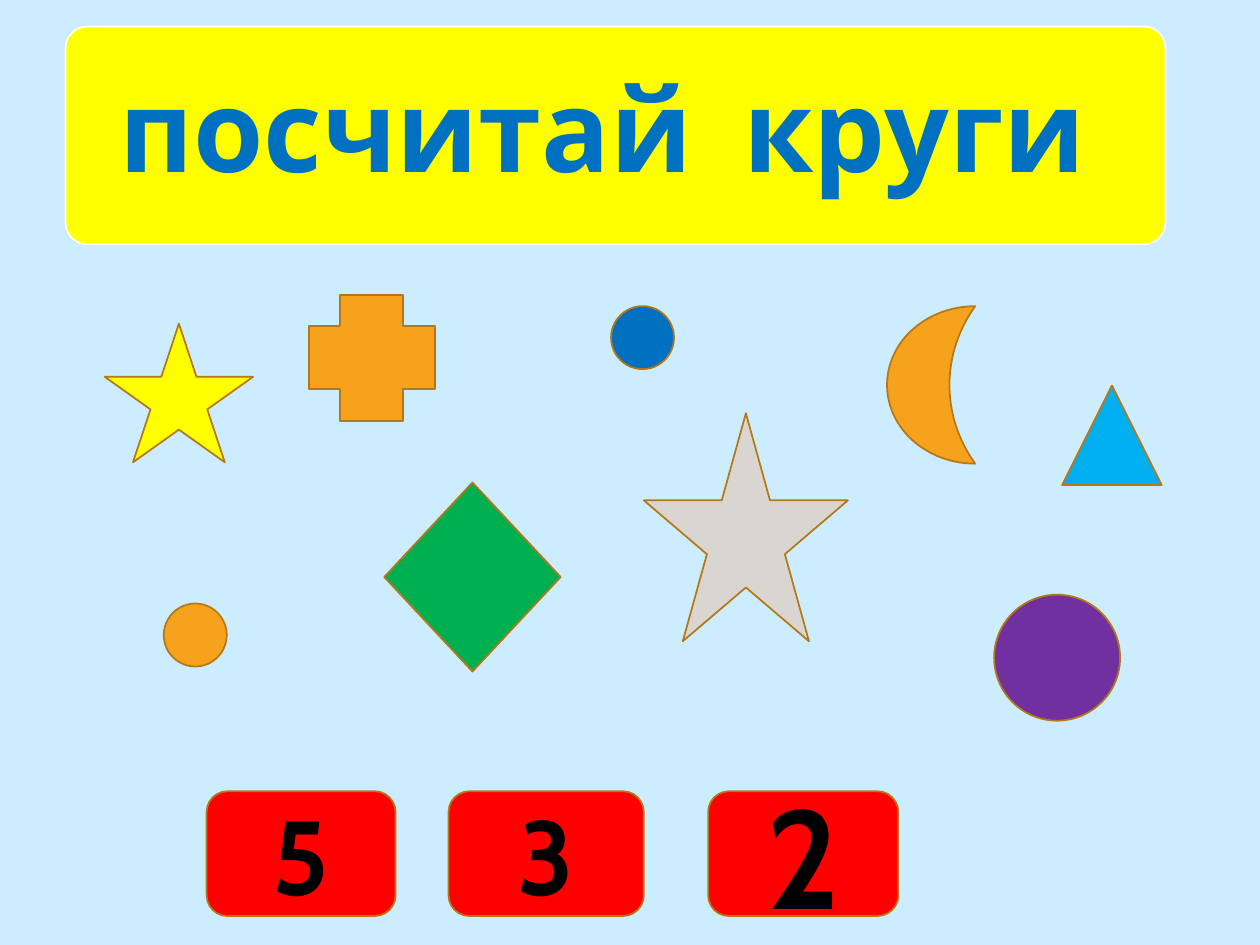
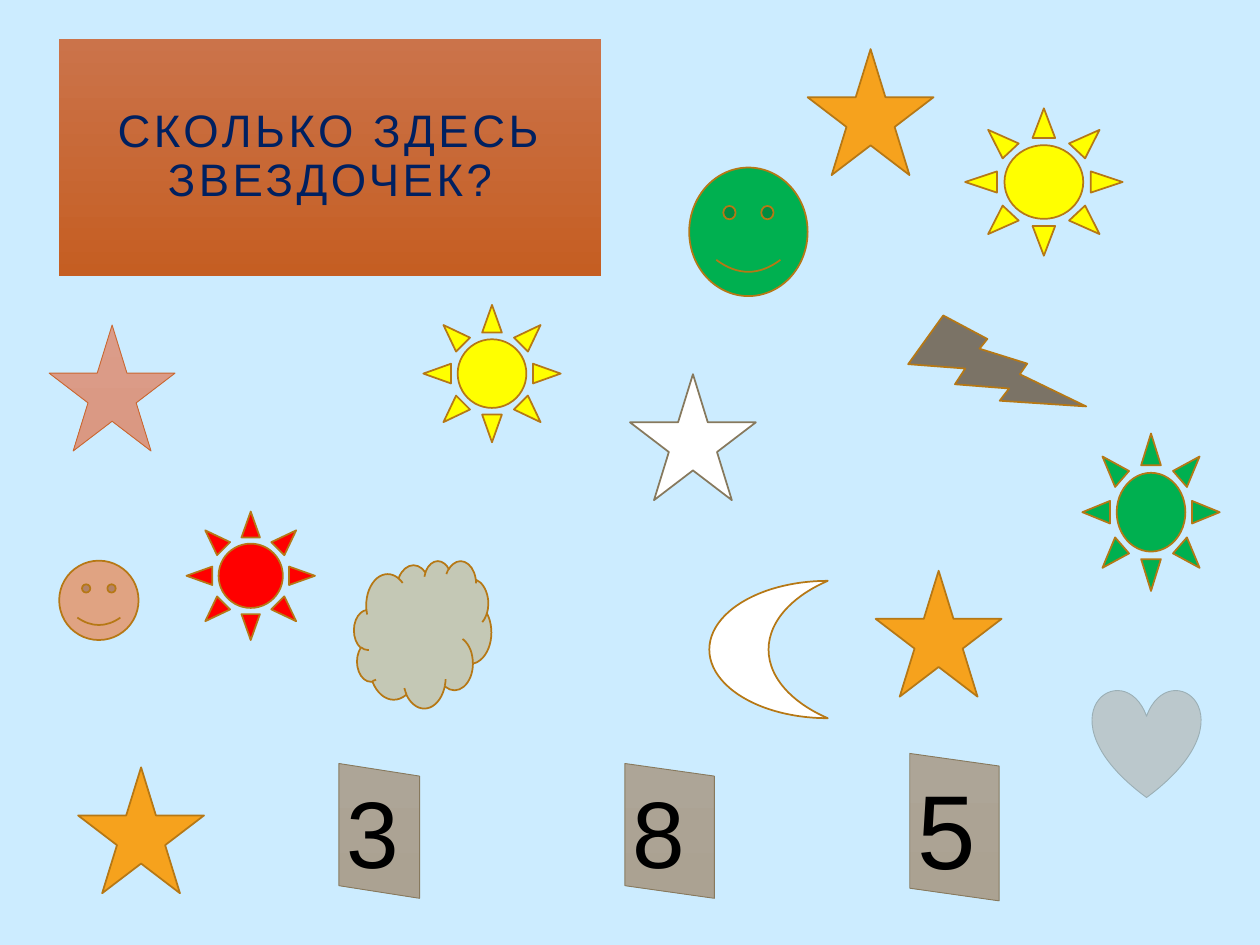
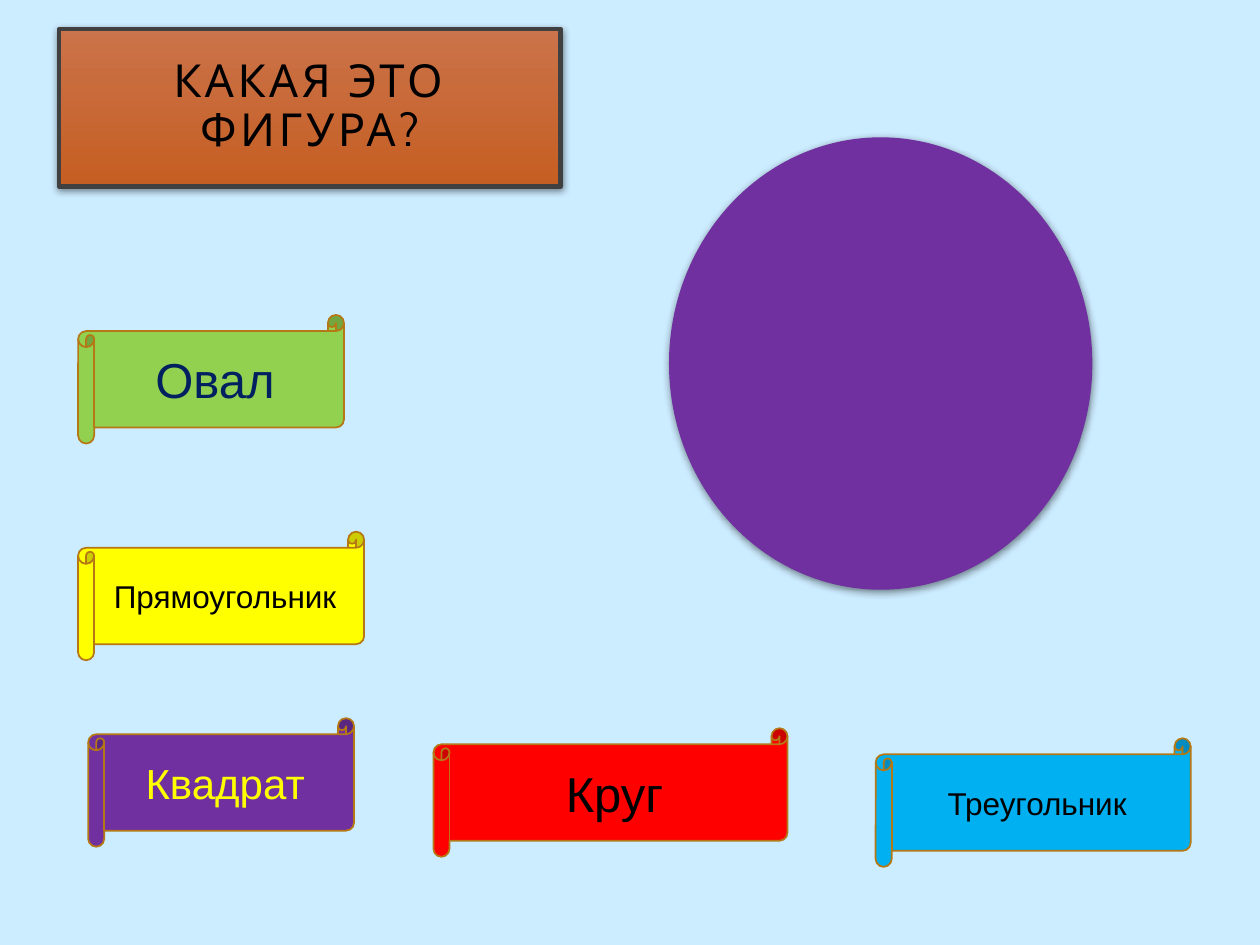
"""Build three counting and shape-naming slides for young children."""
from dataclasses import dataclass

from lxml import etree
from pptx import Presentation
from pptx.dml.color import RGBColor
from pptx.enum.shapes import MSO_SHAPE as Kind
from pptx.enum.text import MSO_ANCHOR, MSO_AUTO_SIZE, PP_ALIGN
from pptx.oxml.ns import qn
from pptx.util import Inches, Pt


@dataclass(frozen=True)
class Theme:
    sky: str = "CCECFF"
    outline: str = "B67815"
    taupe: str = "87795D"
    frame: str = "404040"
    white: str = "FFFFFF"
    black: str = "000000"
    navy: str = "002060"
    blue: str = "0070C0"
    cyan: str = "00B0F0"
    green: str = "00B050"
    lime: str = "92D050"
    yellow: str = "FFFF00"
    orange: str = "F6A21D"
    red: str = "FF0000"
    purple: str = "7030A0"
    silver: str = "D9D6D1"
    stone: str = "7B7366"
    sage: str = "C4C8B5"
    peach: str = "E0A382"
    rust: tuple = ("CB734A", "C55E22")
    rose: tuple = ("DB9C89", "DA9882")
    mist: tuple = ("BBC8CC", "B8C6CB")
    sand: tuple = ("ADA597", "ABA292")
    heading: str = "Cabin"
    plain: str = "Arial"
    banner: int = 65
    title: int = 26
    small: int = 18
    medium: int = 24
    large: int = 28
    digit: int = 54
    big_digit: int = 60
    huge_digit: int = 80


THEME = Theme()

COUNT_CIRCLES = [
    (Kind.STAR_5_POINT, (0.83, 2.57, 1.18, 1.1), THEME.yellow),
    (Kind.STAR_5_POINT, (5.11, 3.28, 1.62, 1.81), THEME.silver),
    (Kind.ISOSCELES_TRIANGLE, (8.43, 3.06, 0.79, 0.79), THEME.cyan),
    (Kind.DIAMOND, (3.05, 3.83, 1.4, 1.5), THEME.green),
    (Kind.FLOWCHART_CONNECTOR, (1.3, 4.79, 0.5, 0.5), THEME.orange),
    (Kind.FLOWCHART_CONNECTOR, (4.85, 2.43, 0.5, 0.5), THEME.blue),
    (Kind.OVAL, (7.89, 4.72, 1, 1), THEME.purple),
    (Kind.CROSS, (2.45, 2.34, 1, 1), THEME.orange),
]
ANSWER_CARDS = [
    (Kind.ROUNDED_RECTANGLE, 1.64, 1.5, "5", THEME.big_digit),
    (Kind.ROUNDED_RECTANGLE, 3.56, 1.55, " 3 ", THEME.big_digit),
    (Kind.FLOWCHART_ALTERNATE_PROCESS, 5.62, 1.51, "2", THEME.huge_digit),
]

COUNT_STARS = [
    (Kind.SMILEY_FACE, (5.47, 1.33, 0.94, 1.02), THEME.green),
    (Kind.CLOUD, (2.81, 4.45, 1.09, 1.17), THEME.sage),
    (Kind.SUN, (3.36, 2.42, 1.09, 1.09), THEME.yellow),
    (Kind.SUN, (7.66, 0.86, 1.25, 1.17), THEME.yellow),
    (Kind.SUN, (8.59, 3.44, 1.09, 1.25), THEME.green),
    (Kind.MOON, (5.63, 4.61, 0.94, 1.09), THEME.white),
    (Kind.SMILEY_FACE, (0.47, 4.45, 0.63, 0.63), THEME.peach),
    (Kind.SUN, (1.48, 4.06, 1.02, 1.02), THEME.red),
]
STARS = [
    (0.62, 6.09, THEME.orange, THEME.outline, 1),
    (0.39, 2.58, THEME.rose, "C96731", 0.5),
    (6.95, 4.53, THEME.orange, THEME.outline, 1),
    (6.41, 0.39, THEME.orange, THEME.outline, 1),
    (5, 2.97, THEME.white, THEME.taupe, 1),
]
SLANTED_TILES = [
    ("5", (7.22, 5.98, 0.71, 1.07), THEME.big_digit),
    ("8", (4.96, 6.06, 0.71, 0.97), THEME.digit),
    ("3", (2.69, 6.06, 0.64, 0.97), THEME.digit),
]

SCROLLS = [
    ("Овал", (0.62, 2.5, 2.11), THEME.lime, THEME.large, THEME.navy),
    ("Треугольник", (6.95, 5.86, 2.5), THEME.cyan, THEME.small, THEME.black),
    ("Круг", (3.44, 5.78, 2.81), THEME.red, THEME.large, THEME.black),
    ("Прямоугольник", (0.62, 4.22, 2.27), THEME.yellow, THEME.small, THEME.black),
    ("Квадрат", (0.7, 5.7, 2.11), THEME.purple, THEME.medium, THEME.yellow),
]


def paint(shape, fill, line=THEME.outline, width=1):
    shape.shadow.inherit = False
    if isinstance(fill, tuple):
        shape.fill.gradient()
        shape.fill.gradient_angle = 270
        for stop, color in zip(shape.fill.gradient_stops, fill):
            stop.color.rgb = RGBColor.from_string(color)
    else:
        shape.fill.solid()
        shape.fill.fore_color.rgb = RGBColor.from_string(fill)
    if line:
        shape.line.color.rgb = RGBColor.from_string(line)
        shape.line.width = Pt(width)
    else:
        shape.line.fill.background()


def add_figure(page, kind, place, fill, line=THEME.outline, width=1):
    shape = page.shapes.add_shape(kind, *map(Inches, place))
    paint(shape, fill, line, width)
    return shape


def write(shape, text, size, color, font=THEME.plain, bold=False, align=PP_ALIGN.CENTER):
    frame = shape.text_frame
    frame.text = text
    frame.vertical_anchor = MSO_ANCHOR.MIDDLE
    para = frame.paragraphs[0]
    para.alignment = align
    para.font.size = Pt(size)
    para.font.name = font
    para.font.bold = bold
    para.font.color.rgb = RGBColor.from_string(color)
    return para


def set_margins(frame, margin):
    frame.margin_left = frame.margin_right = Inches(margin)
    frame.margin_top = frame.margin_bottom = Inches(margin)


def place_title(page, text, place, size, color, font, bold=False, margin=0.2):
    title = page.shapes.title
    title.left, title.top, title.width, title.height = map(Inches, place)
    para = write(title, text, size, color, font, bold)
    para.line_spacing = 0.9
    frame = title.text_frame
    frame.auto_size = MSO_AUTO_SIZE.NONE
    frame.word_wrap = True
    set_margins(frame, margin)
    return title


def space_letters(title, points):
    for span in title.text_frame.paragraphs[0].runs:
        span.font._element.set("spc", str(points * 100))


def cast_shadow(shape):
    effects = shape._element.spPr.find(qn("a:effectLst"))
    shadow = etree.SubElement(effects, qn("a:outerShdw"), blurRad=str(Pt(4.4)),
                              dist=str(Pt(1.2)), dir="5400000", rotWithShape="0")
    color = etree.SubElement(shadow, qn("a:srgbClr"), val=THEME.black)
    etree.SubElement(color, qn("a:alpha"), val="45000")


def add_tile(page, digit, place, size, slant=0.1):
    left, top, width, height = place
    right, bottom = left + width, top + height
    corners = [(right, top + slant), (right, bottom + slant), (left, bottom)]
    outline = page.shapes.build_freeform(Inches(left), Inches(top))
    outline.add_line_segments([(Inches(x), Inches(y)) for x, y in corners])
    tile = outline.convert_to_shape()
    paint(tile, THEME.sand, THEME.taupe, 0.5)
    write(tile, digit, size, THEME.black, align=PP_ALIGN.LEFT)
    set_margins(tile.text_frame, 0.06)


def build_circles(page):
    title = place_title(page, "посчитай  круги ", (0.57, 0.26, 8.63, 1.63),
                        THEME.banner, THEME.blue, THEME.heading, True, 0.27)
    panel = add_figure(page, Kind.ROUNDED_RECTANGLE, (0.52, 0.21, 8.73, 1.73),
                       THEME.yellow, THEME.white)
    panel.adjustments[0] = 0.1
    title._element.addprevious(panel._element)
    for figure in COUNT_CIRCLES:
        add_figure(page, *figure)
    moon = add_figure(page, Kind.MOON, (7.04, 2.43, 0.7, 1.25), THEME.orange)
    moon.adjustments[0] = 0.708
    for kind, left, width, digit, size in ANSWER_CARDS:
        card = add_figure(page, kind, (left, 6.28, width, 0.99), THEME.red)
        write(card, digit, size, THEME.black, THEME.heading, True)


def build_stars(page):
    title = place_title(page, "СКОЛЬКО ЗДЕСЬ ЗВЕЗДОЧЕК?", (0.47, 0.31, 4.3, 1.88),
                        THEME.title, THEME.navy, THEME.plain)
    space_letters(title, 2)
    paint(title, THEME.rust, None)
    add_figure(page, Kind.HEART, (8.67, 5.47, 0.86, 0.86), THEME.mist, "9BAFB5", 0.5)
    bolt = add_figure(page, Kind.LIGHTNING_BOLT, (7.32, 2.38, 1.09, 1.17), THEME.stone)
    bolt.rotation = 332
    for figure in COUNT_STARS:
        add_figure(page, *figure)
    for tile in SLANTED_TILES:
        add_tile(page, *tile)
    for left, top, fill, line, width in STARS:
        add_figure(page, Kind.STAR_5_POINT, (left, top, 1, 1), fill, line, width)


def build_names(page):
    title = place_title(page, "КАКАЯ ЭТО ФИГУРА?", (0.47, 0.23, 3.98, 1.25),
                        THEME.title, THEME.black, THEME.heading)
    space_letters(title, 2)
    paint(title, THEME.rust, THEME.frame, 2.5)
    circle = add_figure(page, Kind.OVAL, (5.31, 1.09, 3.36, 3.59), THEME.purple, None)
    for shape in (title, circle):
        cast_shadow(shape)
    for name, place, fill, size, color in SCROLLS:
        scroll = add_figure(page, Kind.HORIZONTAL_SCROLL, (*place, 1.02), fill)
        write(scroll, name, size, color)


def main():
    deck = Presentation()
    deck.slide_width, deck.slide_height = Inches(10), Inches(7.5)
    backdrop = deck.slide_master.background.fill
    backdrop.solid()
    backdrop.fore_color.rgb = RGBColor.from_string(THEME.sky)
    title_only = deck.slide_layouts.get_by_name("Title Only")
    for build in (build_circles, build_stars, build_names):
        build(deck.slides.add_slide(title_only))
    deck.save("out.pptx")


if __name__ == "__main__":
    main()
